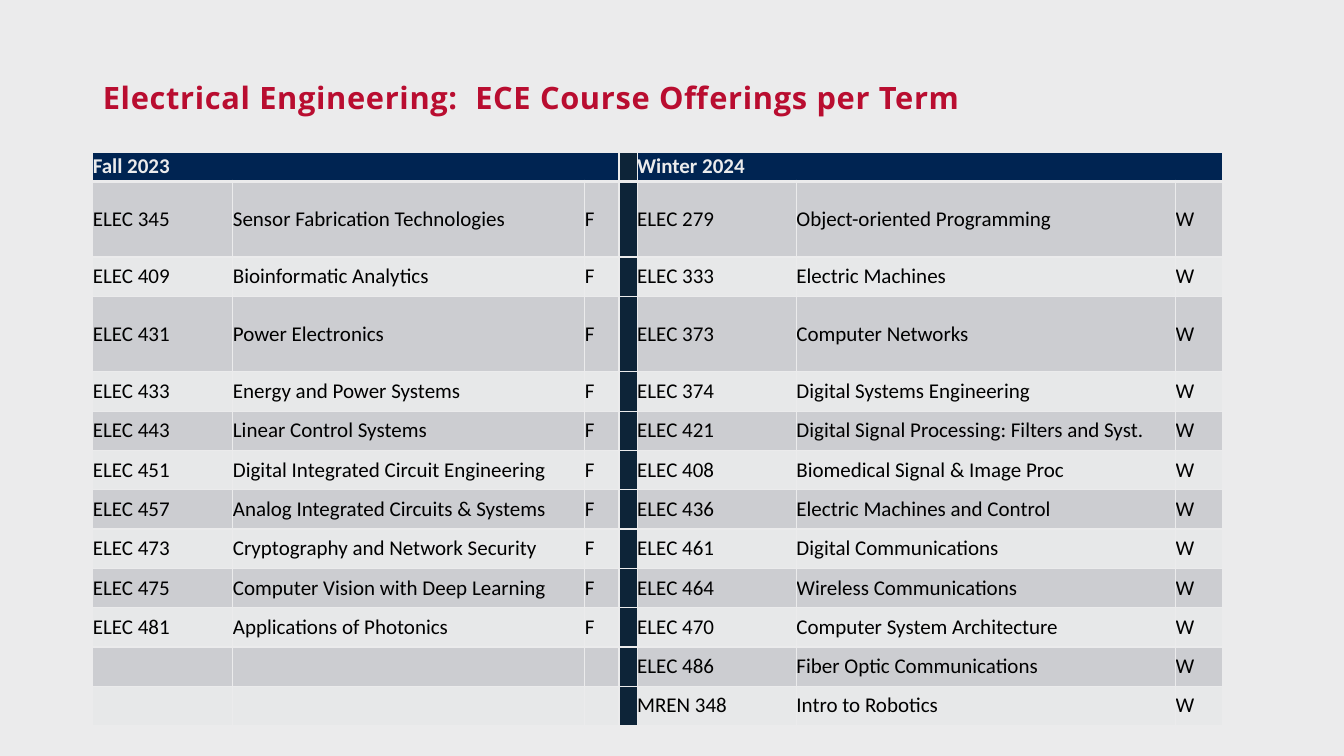
import dataclasses
import itertools

import lxml.etree
import pptx
import pptx.dml.color
import pptx.enum.text
import pptx.oxml.ns
import pptx.util

Inches = pptx.util.Inches
Pt = pptx.util.Pt
PALE = "EBEBEC"
NAVY = "002452"
DARK = "0D2438"
BANDS = ("E7E8E9", "CCCDD1")
WIDTHS = (1.39, 3.49, 0.34, 0.18, 1.58, 3.76, 0.47)
HEIGHTS = (0.29, 0.75, 0.39, 0.75) + (0.39,) * 9
SPLIT = 3


@dataclasses.dataclass
class Course:
    code: str
    name: str


@dataclasses.dataclass
class Term:
    label: str
    mark: str
    col: int
    items: list[Course]


TERMS = (
    Term("Fall 2023", "F", 0, [
        Course("ELEC 345", "Sensor Fabrication Technologies"),
        Course("ELEC 409", "Bioinformatic Analytics"),
        Course("ELEC 431", "Power Electronics"),
        Course("ELEC 433", "Energy and Power Systems"),
        Course("ELEC 443", "Linear Control Systems"),
        Course("ELEC 451", "Digital Integrated Circuit Engineering"),
        Course("ELEC 457", "Analog Integrated Circuits & Systems"),
        Course("ELEC 473", "Cryptography and Network Security"),
        Course("ELEC 475", "Computer Vision with Deep Learning"),
        Course("ELEC 481", "Applications of Photonics"),
    ]),
    Term("Winter 2024", "W", 4, [
        Course("ELEC 279", "Object-oriented Programming"),
        Course("ELEC 333", "Electric Machines"),
        Course("ELEC 373", "Computer Networks"),
        Course("ELEC 374", "Digital Systems Engineering"),
        Course("ELEC 421", "Digital Signal Processing: Filters and Syst."),
        Course("ELEC 408", "Biomedical Signal & Image Proc"),
        Course("ELEC 436", "Electric Machines and Control"),
        Course("ELEC 461", "Digital Communications"),
        Course("ELEC 464", "Wireless Communications"),
        Course("ELEC 470", "Computer System Architecture"),
        Course("ELEC 486", "Fiber Optic Communications"),
        Course("MREN 348", "Intro to Robotics"),
    ]),
)


def paint(fill, color: str) -> None:
    fill.solid()
    fill.fore_color.rgb = pptx.dml.color.RGBColor.from_string(color)


def style(font, face: str, size: float, color: str, bold: bool) -> None:
    font.name = face
    font.size = Pt(size)
    font.bold = bold
    paint(font.fill, color)


def edge(cell, row: int) -> None:
    qn = pptx.oxml.ns.qn
    props = cell._tc.get_or_add_tcPr()
    for spot, side in enumerate("LRTB"):
        thick = (row, side) in ((0, "B"), (1, "T"))
        line = lxml.etree.Element(qn(f"a:ln{side}"), w=str(Pt(3 if thick else 1)))
        solid = lxml.etree.SubElement(line, qn("a:solidFill"))
        lxml.etree.SubElement(solid, qn("a:srgbClr"), val=PALE)
        props.insert(spot, line)


def format_cell(cell, row: int, col: int) -> None:
    head = row == 0
    cell.margin_left = cell.margin_right = 0
    cell.margin_top = cell.margin_bottom = 0
    cell.vertical_anchor = pptx.enum.text.MSO_ANCHOR.MIDDLE
    paint(cell.fill, DARK if col == SPLIT else NAVY if head else BANDS[row % 2])
    edge(cell, row)
    para = cell.text_frame.paragraphs[0]
    para._p.get_or_add_endParaRPr().set("sz", "1500")
    for run in para.runs:
        style(run.font, "Calibri", 15, PALE if head else "000000", head)


def add_title(slide) -> None:
    title = slide.shapes.title
    title.left, title.top = Inches(0.92), Inches(0.61)
    title.width, title.height = Inches(11.5), Inches(0.76)
    frame = title.text_frame
    frame.text = "Electrical Engineering:  ECE Course Offerings per Term"
    frame.auto_size = pptx.enum.text.MSO_AUTO_SIZE.NONE
    frame.vertical_anchor = pptx.enum.text.MSO_ANCHOR.MIDDLE
    para = frame.paragraphs[0]
    para.alignment = pptx.enum.text.PP_ALIGN.LEFT
    para.line_spacing = 0.9
    font = para.runs[0].font
    style(font, "Open Sans", 22, "B90D30", True)
    font._element.set("spc", "50")


def add_terms(slide) -> None:
    frame = slide.shapes.add_table(
        len(HEIGHTS), len(WIDTHS), Inches(0.92), Inches(1.51),
        Inches(sum(WIDTHS)), Inches(sum(HEIGHTS)))
    table = frame.table
    for col, width in zip(table.columns, WIDTHS):
        col.width = Inches(width)
    for row, height in zip(table.rows, HEIGHTS):
        row.height = Inches(height)
    for term in TERMS:
        first = table.cell(0, term.col)
        first.merge(table.cell(0, term.col + 2))
        first.text_frame.text = term.label
        for row, item in enumerate(term.items, 1):
            for step, text in enumerate((item.code, item.name, term.mark)):
                table.cell(row, term.col + step).text_frame.text = text
    for row, col in itertools.product(range(len(HEIGHTS)), range(len(WIDTHS))):
        format_cell(table.cell(row, col), row, col)


def main() -> None:
    deck = pptx.Presentation()
    deck.slide_width, deck.slide_height = Inches(13.33), Inches(7.5)
    slide = deck.slides.add_slide(deck.slide_layouts[5])
    paint(slide.background.fill, PALE)
    add_title(slide)
    add_terms(slide)
    deck.save("out.pptx")


if __name__ == "__main__":
    main()
